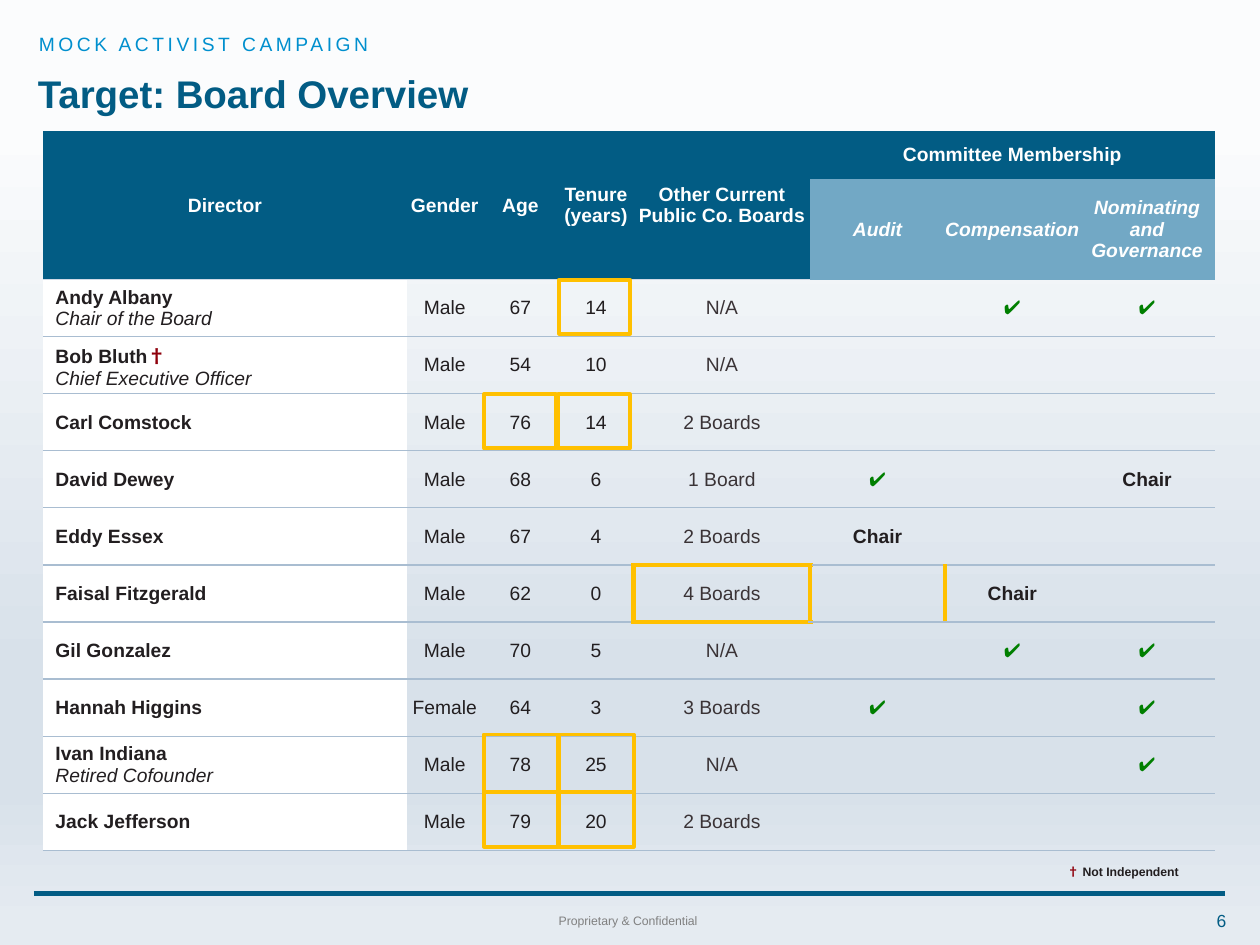
from dataclasses import dataclass

from lxml import etree
from pptx import Presentation
from pptx.dml.color import RGBColor
from pptx.enum.shapes import MSO_CONNECTOR, MSO_SHAPE
from pptx.enum.text import MSO_ANCHOR, MSO_AUTO_SIZE, PP_ALIGN
from pptx.oxml.ns import qn
from pptx.util import Inches, Pt

LEFT, CENTER, RIGHT = PP_ALIGN.LEFT, PP_ALIGN.CENTER, PP_ALIGN.RIGHT
TOP, MIDDLE = MSO_ANCHOR.TOP, MSO_ANCHOR.MIDDLE
RECT = MSO_SHAPE.RECTANGLE
STRAIGHT = MSO_CONNECTOR.STRAIGHT
NO_FIT = MSO_AUTO_SIZE.NONE


@dataclass(frozen=True)
class Theme:
    font: str = "Arial"
    symbol_font: str = "Noto Sans CJK JP"
    navy: str = "025C84"
    steel: str = "72A8C5"
    sky: str = "008FCE"
    white: str = "FFFFFF"
    ink: str = "221E20"
    soft_ink: str = "3A3336"
    gray: str = "808080"
    red: str = "8F000C"
    green: str = "007F00"
    gold: str = "FFC000"
    rule: str = "A9BDD1"
    header_rule: str = "D0D9E6"
    background: tuple = ((13, "FBFCFD"), (71, "D8E1EA"), (83, "D8E1EA"), (98, "E5EBF1"))
    title_size: int = 22
    body_size: int = 11
    page_size: int = 10
    small_size: int = 7


T = Theme()


def style(p, size, color, align=LEFT, bold=False, italic=False):
    p.alignment = align
    p.font.name = T.font
    p.font.size = Pt(size)
    p.font.color.rgb = RGBColor.from_string(color)
    p.font.bold = bold
    p.font.italic = italic


def add_border(cell, side, color, width):
    ln = etree.SubElement(cell._tc.get_or_add_tcPr(), qn(f"a:ln{side}"), w=str(Pt(width)))
    solid = etree.SubElement(ln, qn("a:solidFill"))
    etree.SubElement(solid, qn("a:srgbClr"), val=color)


prs = Presentation()
prs.slide_width, prs.slide_height = Inches(10), Inches(7.5)
s = prs.slides.add_slide(prs.slide_layouts[5])

fill = s.background.fill
fill.gradient()
fill.gradient_angle = 270
stops = s.element.find(".//" + qn("a:gsLst"))
for gs in list(stops):
    stops.remove(gs)
for position, color in T.background:
    gs = etree.SubElement(stops, qn("a:gs"), pos=str(position * 1000))
    etree.SubElement(gs, qn("a:srgbClr"), val=color)

title = s.shapes.title
title.left, title.top, title.width, title.height = Inches(0.2), Inches(0.38), Inches(9.66), Inches(0.77)
tf = title.text_frame
tf.text = "Target: Board Overview"
tf.auto_size = NO_FIT
tf.vertical_anchor = MIDDLE
tf.paragraphs[0].line_spacing = 0.9
style(tf.paragraphs[0], T.title_size, T.navy, bold=True)

footer_rule = s.shapes.add_connector(STRAIGHT, Inches(0.27), Inches(7.09), Inches(9.72), Inches(7.09))
footer_rule.line.color.rgb = RGBColor.from_string(T.navy)
footer_rule.line.width = Pt(3)
etree.SubElement(footer_rule._element.spPr, qn("a:effectLst"))

LABELS = [
    ("MOCK ACTIVIST CAMPAIGN", 0.21, 0.21, 9.65, 0.23, T.body_size, T.sky, LEFT, TOP, 200),
    ("Proprietary & Confidential", 0.25, 7.2, 9.47, 0.22, T.small_size, T.gray, CENTER, TOP, 0),
    ("6", 9.34, 7.17, 0.49, 0.27, T.page_size, T.navy, RIGHT, MIDDLE, 0),
]
for text, x, y, w, h, size, color, align, anchor, spacing in LABELS:
    tf = s.shapes.add_textbox(Inches(x), Inches(y), Inches(w), Inches(h)).text_frame
    tf.word_wrap = True
    tf.vertical_anchor = anchor
    r = tf.paragraphs[0].add_run()
    r.text = text
    if spacing:
        r.font._element.set("spc", str(spacing))
    style(tf.paragraphs[0], size, color, align)

tf = s.shapes.add_textbox(Inches(8.37), Inches(6.81), Inches(1.22), Inches(0.22)).text_frame
tf.word_wrap = True
p = tf.paragraphs[0]
style(p, T.small_size, T.ink, bold=True)
dagger, note = p.add_run(), p.add_run()
dagger.text, note.text = "†", " Not Independent"
dagger.font.name = T.symbol_font
dagger.font.color.rgb = RGBColor.from_string(T.red)

HEADERS = ["Director", "Gender", "Age", "Tenure (years)", "Other Current Public Co. Boards"]
COMMITTEES = ["Audit", "Compensation", "Nominating and Governance"]
DIRECTORS = [
    ("Andy Albany\nChair of the Board", "Male", "67", "14", "N/A", "", "✔", "✔"),
    ("Bob Bluth†\nChief Executive Officer", "Male", "54", "10", "N/A", "", "", ""),
    ("Carl Comstock", "Male", "76", "14", "2 Boards", "", "", ""),
    ("David Dewey", "Male", "68", "6", "1 Board", "✔", "", "Chair"),
    ("Eddy Essex", "Male", "67", "4", "2 Boards", "Chair", "", ""),
    ("Faisal Fitzgerald", "Male", "62", "0", "4 Boards", "", "Chair", ""),
    ("Gil Gonzalez", "Male", "70", "5", "N/A", "", "✔", "✔"),
    ("Hannah Higgins", "Female", "64", "3", "3 Boards", "✔", "", "✔"),
    ("Ivan Indiana\nRetired Cofounder", "Male", "78", "25", "N/A", "", "", "✔"),
    ("Jack Jefferson", "Male", "79", "20", "2 Boards", "", "", ""),
]
COLUMN_WIDTHS = [2.89, 0.6, 0.6, 0.6, 1.4, 1.07, 1.07, 1.07]
ROW_HEIGHTS = [0.38, 0.8] + [0.453] * len(DIRECTORS)
OUTLINED = (5, 4)
SIDES = {"L": (0, -1), "R": (0, 1), "T": (-1, 0), "B": (1, 0)}

frame = s.shapes.add_table(len(ROW_HEIGHTS), len(COLUMN_WIDTHS), Inches(0.34), Inches(1.04),
                           Inches(sum(COLUMN_WIDTHS)), Inches(sum(ROW_HEIGHTS)))
table = frame.table
table.first_row = table.horz_banding = False
table._tbl.tblPr.find(qn("a:tableStyleId")).text = "{2D5ABB26-0587-4C30-8999-92F81FD0307C}"
for column, width in zip(table.columns, COLUMN_WIDTHS):
    column.width = Inches(width)
for row, height in zip(table.rows, ROW_HEIGHTS):
    row.height = Inches(height)
for c in range(len(HEADERS)):
    table.cell(0, c).merge(table.cell(1, c))
table.cell(0, 5).merge(table.cell(0, 7))

header_cells = [(0, c, text, T.navy) for c, text in enumerate(HEADERS + ["Committee Membership"])]
header_cells += [(1, c, text, T.steel) for c, text in enumerate(COMMITTEES, 5)]
for row, c, text, color in header_cells:
    cell = table.cell(row, c)
    cell.text = text
    cell.vertical_anchor = MIDDLE
    cell.margin_left = cell.margin_right = cell.margin_top = cell.margin_bottom = 0
    if c < len(HEADERS):
        add_border(cell, "B", T.header_rule, 1)
    cell.fill.solid()
    cell.fill.fore_color.rgb = RGBColor.from_string(color)
    style(cell.text_frame.paragraphs[0], T.body_size, T.white, CENTER, bold=True, italic=row == 1)

for i, director in enumerate(DIRECTORS):
    for c, text in enumerate(director):
        cell = table.cell(i + 2, c)
        cell.text = text
        cell.vertical_anchor = MIDDLE
        cell.margin_left = cell.margin_right = cell.margin_top = cell.margin_bottom = 0
        for side, (di, dc) in SIDES.items():
            if OUTLINED in ((i, c), (i + di, c + dc)):
                add_border(cell, side, T.gold, 3)
            elif side == "T" and i == 0:
                if c < len(HEADERS):
                    add_border(cell, side, T.header_rule, 1)
            elif side in "TB":
                add_border(cell, side, T.rule, 0.75)
        if c == 0:
            cell.margin_left = Inches(0.1)
            cell.fill.solid()
            cell.fill.fore_color.rgb = RGBColor.from_string(T.white)
            for n, p in enumerate(cell.text_frame.paragraphs):
                style(p, T.body_size, T.ink, bold=n == 0, italic=n == 1)
            p = cell.text_frame.paragraphs[0]
            if p.text.endswith("†"):
                p.runs[0].text = p.text[:-1]
                r = p.add_run()
                r.text = "†"
                r.font.name = T.symbol_font
                r.font.color.rgb = RGBColor.from_string(T.red)
        else:
            cell.fill.background()
            color = T.green if text == "✔" else T.soft_ink if c == 4 else T.ink
            style(cell.text_frame.paragraphs[0], T.body_size, color, CENTER, bold=text == "Chair")

HIGHLIGHTS = [
    (2.22, 0.56, 0.43, [4.44]),
    (3.13, 0.57, 0.43, [3.84, 4.43]),
    (5.83, 0.59, 0.46, [3.84, 4.44]),
    (6.29, 0.59, 0.43, [3.84, 4.44]),
]
for top, width, height, lefts in HIGHLIGHTS:
    for left in lefts:
        sp = s.shapes.add_shape(RECT, Inches(left), Inches(top), Inches(width), Inches(height))
        sp.shadow.inherit = False
        sp.fill.background()
        sp.line.color.rgb = RGBColor.from_string(T.gold)
        sp.line.width = Pt(2.25)

prs.save("out.pptx")
